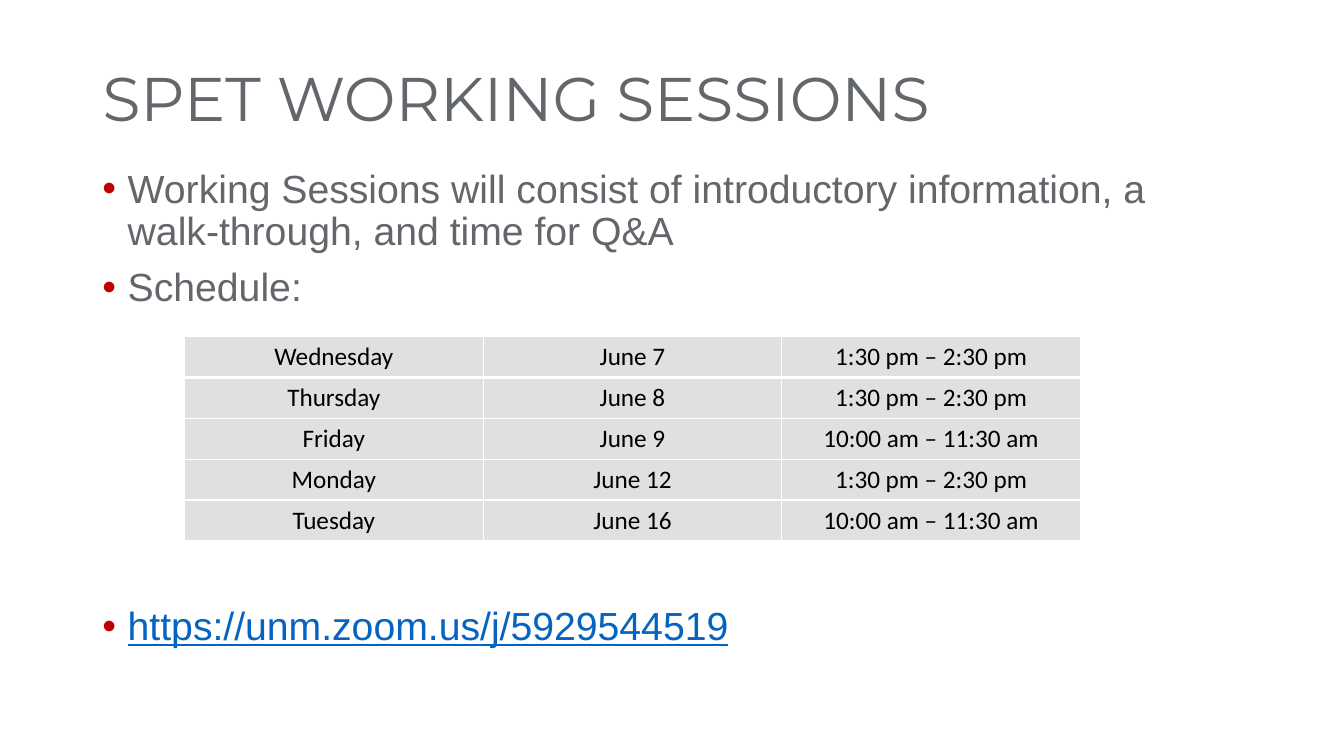
import pptx
import pptx.util
import pptx.dml.color
import pptx.enum.text
import pptx.oxml
import pptx.oxml.ns
from lxml import etree

Cm = pptx.util.Cm
Pt = pptx.util.Pt
ALIGN = pptx.enum.text.PP_ALIGN
GREY, RED, BLUE, WHITE = "63666A", "C00000", "0563C1", "FFFFFF"


def color(code):
    return pptx.dml.color.RGBColor.from_string(code)


def write(par, text, size=28, face="Arial", tint=GREY, align=ALIGN.LEFT,
          lead=None, before=0, under=None, bullet=False):
    if bullet:
        props = par._p.get_or_add_pPr()
        props.set("marL", str(Cm(0.64)))
        props.set("indent", str(-Cm(0.64)))
        shade = etree.SubElement(props, pptx.oxml.ns.qn("a:buClr"))
        etree.SubElement(shade, pptx.oxml.ns.qn("a:srgbClr"), val=RED)
        etree.SubElement(props, pptx.oxml.ns.qn("a:buFont"), typeface="Arial")
        etree.SubElement(props, pptx.oxml.ns.qn("a:buChar"), char="•")
    par.alignment = align
    par.line_spacing = lead
    par.space_before = Pt(before)
    run = par.add_run()
    run.text = text
    run.font.size = Pt(size)
    run.font.name = face
    run.font.underline = under
    run.font.color.rgb = color(tint)


deck = pptx.Presentation()
deck.slide_width, deck.slide_height = Cm(33.87), Cm(19.05)
slide = deck.slides.add_slide(deck.slide_layouts[5])

title = slide.shapes.title
title.left, title.top, title.width, title.height = Cm(2.33), Cm(0.97), Cm(29.21), Cm(3.17)
title.text_frame.vertical_anchor = pptx.enum.text.MSO_ANCHOR.MIDDLE
title.text_frame.auto_size = pptx.enum.text.MSO_AUTO_SIZE.NONE
write(title.text_frame.paragraphs[0], "SPET WORKING SESSIONS", size=44,
      face="Montserrat", lead=0.9)

body = slide.shapes.add_textbox(Cm(2.33), Cm(4.14), Cm(29.21), Cm(13.03)).text_frame
body.word_wrap = True
points = [
    ("Working Sessions will consist of introductory information, a walk-through, and time for Q&A",
     0, GREY, None),
    ("Schedule:", 10, GREY, None),
    ("https://unm.zoom.us/j/5929544519", 212, BLUE, True),
]
for num, (text, before, tint, under) in enumerate(points):
    par = body.add_paragraph() if num else body.paragraphs[0]
    write(par, text, tint=tint, lead=0.9, before=before, under=under, bullet=True)

dates = [
    ("Wednesday", "June 7", "1:30 pm – 2:30 pm"),
    ("Thursday", "June 8", "1:30 pm – 2:30 pm"),
    ("Friday", "June 9", "10:00 am – 11:30 am"),
    ("Monday", "June 12", "1:30 pm – 2:30 pm"),
    ("Tuesday", "June 16", "10:00 am – 11:30 am"),
]
grid = slide.shapes.add_table(5, 3, Cm(4.65), Cm(8.48), Cm(22.58), Cm(5.15)).table
for row, texts in enumerate(dates):
    grid.rows[row].height = Cm(1.03)
    for col, text in enumerate(texts):
        cell = grid.cell(row, col)
        props = cell._tc.get_or_add_tcPr()
        for side in ("L", "R", "T", "B"):
            thick = (row, side) in ((0, "B"), (1, "T"))
            line = etree.SubElement(props, pptx.oxml.ns.qn("a:ln" + side),
                                    w=str(Pt(3 if thick else 1)))
            fill = etree.SubElement(line, pptx.oxml.ns.qn("a:solidFill"))
            etree.SubElement(fill, pptx.oxml.ns.qn("a:srgbClr"), val=WHITE)
        cell.fill.solid()
        cell.fill.fore_color.rgb = color("DFE0E2")
        write(cell.text_frame.paragraphs[0], text, size=18, face="Calibri",
              tint="000000", align=ALIGN.CENTER)

deck.save("out.pptx")
